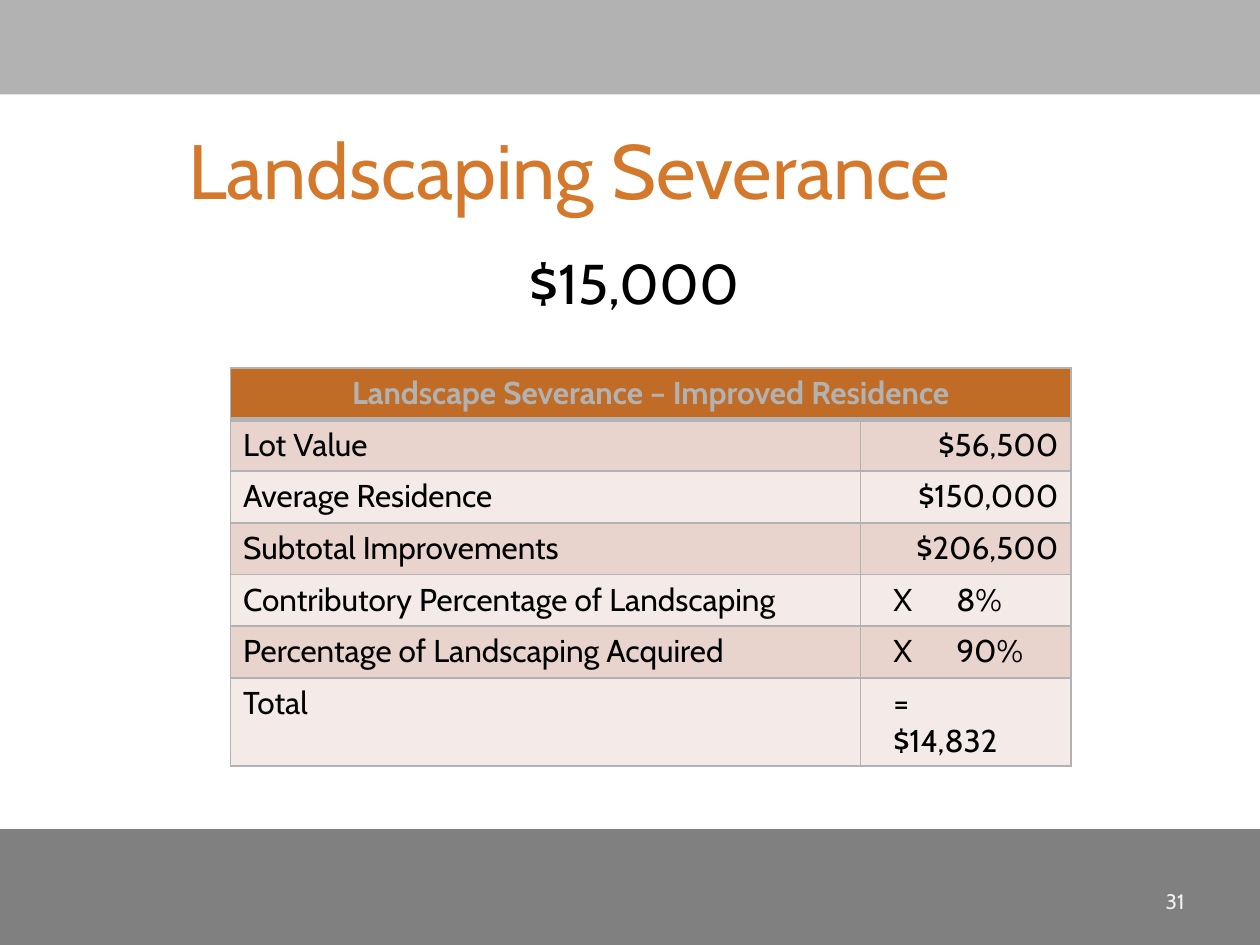
from dataclasses import dataclass

from lxml import etree
from pptx import Presentation
from pptx.dml.color import RGBColor
from pptx.enum.shapes import MSO_SHAPE
from pptx.enum.text import MSO_ANCHOR, MSO_AUTO_SIZE, PP_ALIGN
from pptx.oxml.ns import qn
from pptx.util import Inches, Pt

RECTANGLE = MSO_SHAPE.RECTANGLE
TOP, MIDDLE = MSO_ANCHOR.TOP, MSO_ANCHOR.MIDDLE
NO_AUTOFIT = MSO_AUTO_SIZE.NONE
LEFT, CENTER, RIGHT = PP_ALIGN.LEFT, PP_ALIGN.CENTER, PP_ALIGN.RIGHT


@dataclass(frozen=True)
class Theme:
    font: str = "Cabin"
    paper: str = "FFFFFF"
    ink: str = "000000"
    title: str = "D4782C"
    top_band: str = "B2B2B2"
    bottom_band: str = "808080"
    page_number: str = "F0F0F0"
    header: str = "C06C27"
    border: str = "B2B2B2"
    stripes: tuple = ("E8D4CD", "F4EBE8")
    title_size: int = 44
    amount_size: int = 32
    table_size: int = 18
    number_size: int = 12
    border_width: int = 1
    header_rule: int = 3


THEME = Theme()
HEADER = "Landscape Severance – Improved Residence"
ROWS = [
    ("Lot Value", "", "$56,500"),
    ("Average Residence", "", "$150,000"),
    ("Subtotal Improvements", "", "$206,500"),
    ("Contributory Percentage of Landscaping", "X", "8%"),
    ("Percentage of Landscaping Acquired", "X", "90%"),
    ("Total", "=", "$14,832"),
]
COLUMN_WIDTHS = (5, 1.67)
ROW_HEIGHT = 0.41
OPERATOR_INDENT = 0.16
AMOUNT_TAB = 1.46


def paint(target, color):
    target.fill.solid()
    target.fill.fore_color.rgb = RGBColor.from_string(color)


def write(frame, text, size, color, align, bold=False):
    paragraph = frame.paragraphs[0]
    paragraph.text = text
    paragraph.alignment = align
    font = paragraph.font
    font.name, font.size, font.bold = THEME.font, Pt(size), bold
    font.color.rgb = RGBColor.from_string(color)
    return paragraph


def add_band(slide, top, height, color):
    band = slide.shapes.add_shape(
        RECTANGLE, 0, Inches(top), Inches(10), Inches(height))
    band.shadow.inherit = False
    paint(band, color)
    band.line.fill.background()


def fill_placeholder(holder, box, text, size, color, anchor, right_inset=0.2):
    holder.left, holder.top, holder.width, holder.height = map(Inches, box)
    paint(holder, THEME.paper)
    frame = holder.text_frame
    frame.auto_size = NO_AUTOFIT
    frame.vertical_anchor = anchor
    frame.margin_left, frame.margin_right = Inches(0.2), Inches(right_inset)
    paragraph = write(frame, text, size, color, CENTER)
    paragraph.space_before = Pt(0)
    properties = paragraph._p.get_or_add_pPr()
    properties.set("marL", "0")
    properties.set("indent", "0")
    etree.SubElement(properties, qn("a:buNone"))
    properties.append(properties.find(qn("a:defRPr")))


def add_page_number(slide, number):
    corner = slide.shapes.add_textbox(
        Inches(7.17), Inches(6.95), Inches(2.33), Inches(0.4))
    frame = corner.text_frame
    frame.word_wrap = True
    frame.vertical_anchor = MIDDLE
    write(frame, number, THEME.number_size, THEME.page_number, RIGHT)


def border_cell(cell, top, bottom):
    properties = cell._tc.get_or_add_tcPr()
    widths = {"lnL": THEME.border_width, "lnR": THEME.border_width,
              "lnT": top, "lnB": bottom}
    for position, (edge, width) in enumerate(widths.items()):
        line = etree.Element(qn(f"a:{edge}"), w=str(Pt(width)))
        fill = etree.SubElement(line, qn("a:solidFill"))
        etree.SubElement(fill, qn("a:srgbClr"), val=THEME.border)
        properties.insert(position, line)


def align_operator(paragraph):
    properties = paragraph._p.get_or_add_pPr()
    properties.set("marL", str(Inches(OPERATOR_INDENT)))
    properties.set("indent", "0")
    stops = etree.Element(qn("a:tabLst"))
    etree.SubElement(stops, qn("a:tab"), pos=str(Inches(AMOUNT_TAB)), algn="r")
    properties.find(qn("a:defRPr")).addprevious(stops)


def write_amount(cell, operator, amount):
    text = f"{operator}\t{amount}" if operator else amount
    paragraph = write(cell.text_frame, text, THEME.table_size, THEME.ink,
                      LEFT if operator else RIGHT)
    if operator:
        align_operator(paragraph)


def add_severance_table(slide):
    row_count = len(ROWS) + 1
    table = slide.shapes.add_table(
        row_count, len(COLUMN_WIDTHS), Inches(1.83), Inches(2.92),
        Inches(sum(COLUMN_WIDTHS)), Inches(ROW_HEIGHT * row_count)).table
    for column, width in zip(table.columns, COLUMN_WIDTHS):
        column.width = Inches(width)
    for index, row in enumerate(table.rows):
        row.height = Inches(ROW_HEIGHT)
        color = THEME.stripes[(index - 1) % 2] if index else THEME.header
        top = THEME.header_rule if index == 1 else THEME.border_width
        bottom = THEME.border_width if index else THEME.header_rule
        for cell in row.cells:
            paint(cell, color)
            border_cell(cell, top, bottom)

    heading = table.cell(0, 0)
    heading.merge(table.cell(0, 1))
    write(heading.text_frame, HEADER, THEME.table_size, THEME.border,
          CENTER, bold=True)
    for index, (label, operator, amount) in enumerate(ROWS, start=1):
        write(table.cell(index, 0).text_frame, label, THEME.table_size,
              THEME.ink, LEFT)
        write_amount(table.cell(index, 1), operator, amount)


def main():
    deck = Presentation()
    deck.slide_width, deck.slide_height = Inches(10), Inches(7.5)
    slide = deck.slides.add_slide(deck.slide_layouts[1])
    add_band(slide, 6.58, 0.92, THEME.bottom_band)
    add_band(slide, 0, 0.75, THEME.top_band)
    fill_placeholder(slide.shapes.title, (0.25, 0.92, 9.5, 0.83),
                     "Landscaping Severance", THEME.title_size, THEME.title,
                     MIDDLE, right_inset=1.16)
    fill_placeholder(slide.placeholders[1], (0.25, 1.92, 9.58, 4.5),
                     "$15,000", THEME.amount_size, THEME.ink, TOP)
    add_page_number(slide, "31")
    add_severance_table(slide)
    deck.save("out.pptx")


if __name__ == "__main__":
    main()
